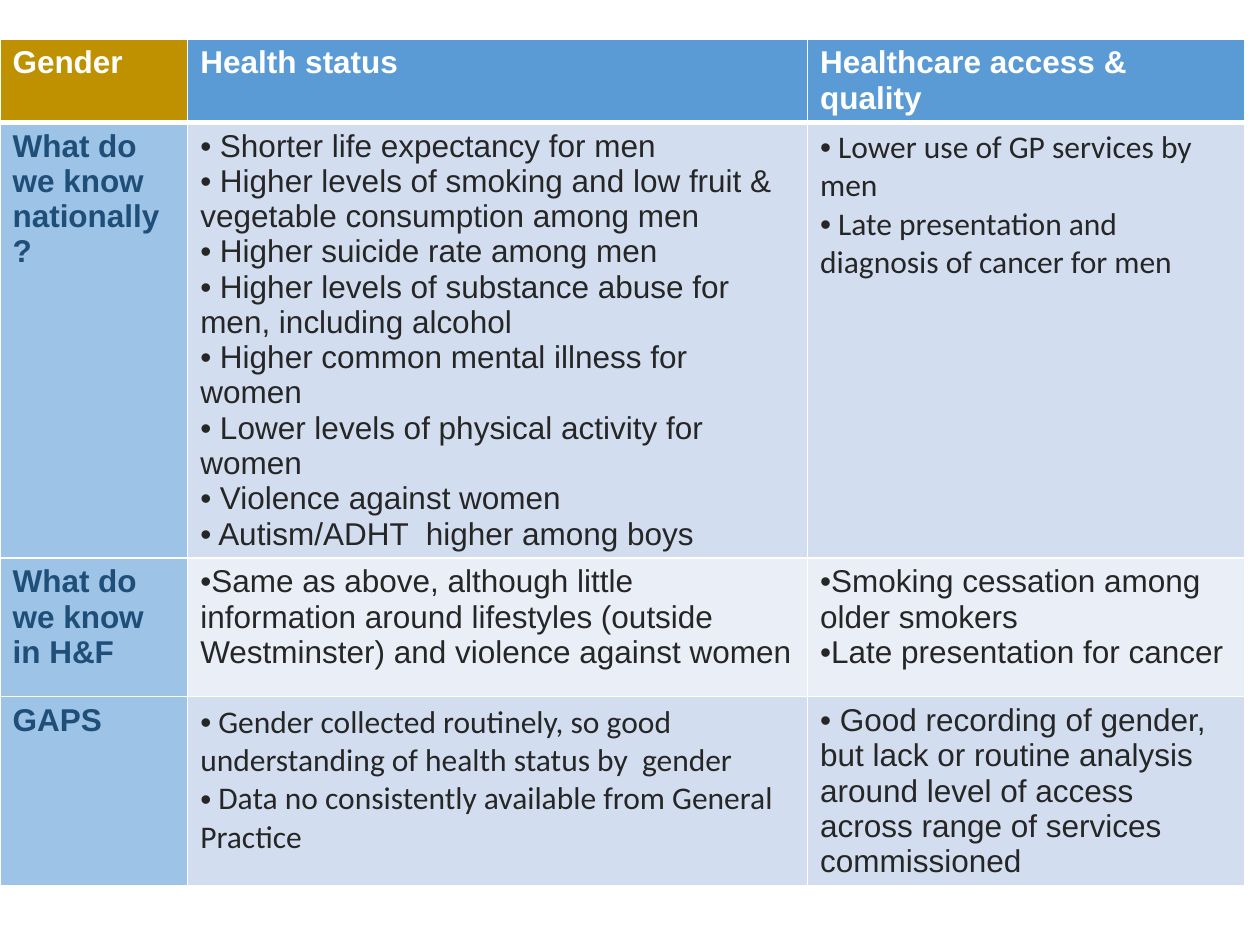
from dataclasses import dataclass

from lxml.etree import SubElement as Sub
from pptx import Presentation
from pptx.dml.color import RGBColor as Rgb
from pptx.oxml.ns import qn
from pptx.util import Inches, Pt


@dataclass(frozen=True)
class Theme:
    gold: str = "BF9000"
    blue: str = "5B9BD5"
    side: str = "9DC3E6"
    bands: tuple = ("EAEFF7", "D2DEEF")
    white: str = "FFFFFF"
    navy: str = "1F4E79"
    ink: str = "262626"
    font: str = "Arial"
    alt: str = "Calibri"
    size: int = 18
    thin: int = 1
    thick: int = 3


THEME = Theme()
COLS = (1.49, 4.92, 3.47)
ROWS = (0.5, 3.02, 1.1, 1.43)
ALT = {(1, 2), (3, 1)}
CELLS = [
    ["Gender", "Health status", "Healthcare access & quality"],
    [
        "What do we know nationally?",
        [
            " Shorter life expectancy for men",
            " Higher levels of smoking and low fruit & vegetable consumption among men",
            " Higher suicide rate among men",
            " Higher levels of substance abuse for men, including alcohol",
            " Higher common mental illness for women",
            " Lower levels of physical activity for women",
            " Violence against women",
            " Autism/ADHT  higher among boys",
        ],
        [
            " Lower use of GP services by men",
            " Late presentation and diagnosis of cancer for men",
        ],
    ],
    [
        "What do we know in H&F",
        [
            "Same as above, although little information around lifestyles "
            "(outside Westminster) and violence against women",
        ],
        ["Smoking cessation among older smokers", "Late presentation for cancer"],
    ],
    [
        "GAPS",
        [
            " Gender collected routinely, so good understanding of health status by  gender",
            " Data no consistently available from General Practice",
        ],
        [
            " Good recording of gender, but lack or routine analysis around "
            "level of access across range of services commissioned",
        ],
    ],
]


def add_edge(cell, side, width):
    line = Sub(cell._tc.get_or_add_tcPr(), qn(f"a:ln{side}"), w=str(Pt(width)))
    fill = Sub(line, qn("a:solidFill"))
    Sub(fill, qn("a:srgbClr"), val=THEME.white)


def add_bullet(para):
    props = para._p.get_or_add_pPr()
    Sub(props, qn("a:buFont"), typeface=THEME.font)
    Sub(props, qn("a:buChar"), char="•")


def set_text(cell, text, color, face):
    listed = isinstance(text, list)
    lines = text if listed else [text]
    frame = cell.text_frame
    for i, line in enumerate(lines):
        para = frame.add_paragraph() if i else frame.paragraphs[0]
        para.text = line
        if listed:
            add_bullet(para)
        font = para.font
        font.name = face
        font.size = Pt(THEME.size)
        font.bold = not listed
        font.color.rgb = Rgb.from_string(color)


def pick_colors(row, col):
    if row == 0:
        return (THEME.blue if col else THEME.gold), THEME.white
    if col == 0:
        return THEME.side, THEME.navy
    return THEME.bands[row % 2], THEME.ink


def fill_cell(cell, row, col):
    back, color = pick_colors(row, col)
    for side in "LRTB":
        heavy = (row, side) in {(0, "B"), (1, "T")}
        add_edge(cell, side, THEME.thick if heavy else THEME.thin)
    cell.fill.solid()
    cell.fill.fore_color.rgb = Rgb.from_string(back)
    face = THEME.alt if (row, col) in ALT else THEME.font
    set_text(cell, CELLS[row][col], color, face)


def add_grid(slide):
    grid = slide.shapes.add_table(
        len(ROWS), len(COLS), Inches(0), Inches(0.31),
        Inches(sum(COLS)), Inches(sum(ROWS)),
    ).table
    grid.first_row = grid.horz_banding = False
    for col, width in zip(grid.columns, COLS):
        col.width = Inches(width)
    for r, height in enumerate(ROWS):
        grid.rows[r].height = Inches(height)
        for c in range(len(COLS)):
            fill_cell(grid.cell(r, c), r, c)


def main():
    deck = Presentation()
    deck.slide_width, deck.slide_height = Inches(10), Inches(7.5)
    add_grid(deck.slides.add_slide(deck.slide_layouts[6]))
    deck.save("out.pptx")


if __name__ == "__main__":
    main()
